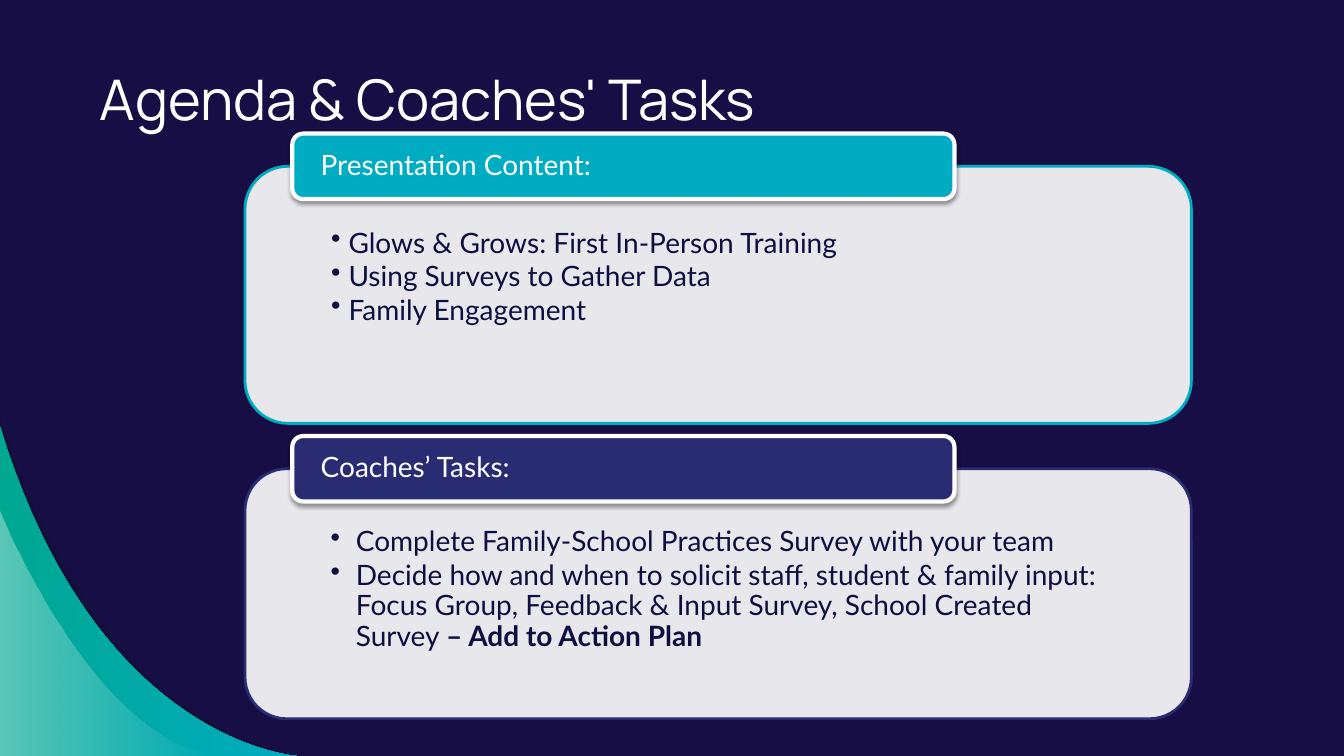
from pptx import Presentation
from pptx.dml.color import RGBColor
from pptx.enum.shapes import MSO_SHAPE
from pptx.enum.text import MSO_ANCHOR, MSO_AUTO_SIZE, PP_ALIGN
from pptx.oxml.ns import qn
from pptx.util import Pt
from lxml.etree import SubElement

HUES = {
    "night": "160E44",
    "shade": "12102F",
    "green": "00A791",
    "teal": "00ACC2",
    "navy": "292C73",
    "ink": "0D0F41",
    "white": "FFFFFF",
}


def hue(name):
    """Return the named colour."""
    return RGBColor.from_string(HUES[name])


def fade(shape, *levels):
    """Set the opacity, in percent, of each fill colour in turn."""
    marks = shape.element.xpath("p:spPr/a:solidFill/a:srgbClr | p:spPr/a:gradFill//a:srgbClr")
    for mark, level in zip(marks, levels):
        SubElement(mark, qn("a:alpha"), val=str(level * 1000))


def style(para, font, size, color):
    """Set the font of a whole paragraph."""
    para.font.name = font
    para.font.size = Pt(size)
    para.font.color.rgb = hue(color)


def wave(slide, curve, *names):
    """Draw a corner wave under a cubic curve, filled plain or left to right."""
    steps = 40
    dots = []
    for step in range(steps + 1):
        t = step / steps
        parts = ((1 - t) ** 3, 3 * t * (1 - t) ** 2, 3 * t * t * (1 - t), t ** 3)
        dots.append(tuple(Pt(sum(k * v for k, v in zip(parts, axis))) for axis in zip(*curve)))
    pen = slide.shapes.build_freeform(*dots[0])
    pen.add_line_segments(dots[1:] + [(0, Pt(540))], close=True)
    shape = pen.convert_to_shape()
    shape.shadow.inherit = False
    shape.line.fill.background()
    if len(names) == 1:
        shape.fill.solid()
        shape.fill.fore_color.rgb = hue(names[0])
    else:
        shape.fill.gradient()
        shape.fill.gradient_angle = 0
        for stop, name in zip(shape.fill.gradient_stops, names):
            stop.color.rgb = hue(name)
    return shape


def panel(slide, box, fill, edge, width, pads, anchor):
    """Add a rounded box ready for left-aligned text."""
    shape = slide.shapes.add_shape(MSO_SHAPE.ROUNDED_RECTANGLE, *map(Pt, box))
    shape.shadow.inherit = False
    shape.fill.solid()
    shape.fill.fore_color.rgb = hue(fill)
    shape.line.color.rgb = hue(edge)
    shape.line.width = Pt(width)
    frame = shape.text_frame
    frame.word_wrap = True
    frame.vertical_anchor = anchor
    frame.margin_left, frame.margin_top, frame.margin_right, frame.margin_bottom = map(Pt, pads)
    return shape


def bullet(para, runs, indent, pitch, after):
    """Fill a bulleted paragraph from (text, bold) pairs."""
    props = para._p.get_or_add_pPr()
    props.set("marL", str(Pt(indent)))
    props.set("indent", str(-Pt(indent)))
    SubElement(props, qn("a:buChar"), char="•")
    para.alignment = PP_ALIGN.LEFT
    para.line_spacing = pitch
    para.space_after = Pt(after)
    style(para, "Lato", 20, "ink")
    for text, bold in runs:
        run = para.add_run()
        run.text = text
        if bold:
            run.font.bold = True


def card(slide, top, height, color, items, indent, pitch, after):
    """Add a pale card with its bullets."""
    shape = panel(slide, (175, top, 676, height), "white", color, 2,
                  (52.5, 33, 52.5, 11.5), MSO_ANCHOR.TOP)
    fade(shape, 90)
    frame = shape.text_frame
    for spot, runs in enumerate(items):
        para = frame.add_paragraph() if spot else frame.paragraphs[0]
        bullet(para, runs, indent, pitch, after)


def label(slide, top, color, text):
    """Add the shadowed heading that overlaps the top of a card."""
    shape = panel(slide, (208.8, top - 23.4, 473, 46.8), color, "white", 3,
                  (18, 0, 18, 0), MSO_ANCHOR.MIDDLE)
    para = shape.text_frame.paragraphs[0]
    para.text = text
    para.alignment = PP_ALIGN.LEFT
    para.line_spacing = 0.9
    style(para, "Lato", 20, "white")
    effect = shape.element.spPr.find(qn("a:effectLst"))
    glow = SubElement(effect, qn("a:outerShdw"), blurRad=str(Pt(3.1)), dist=str(Pt(1.6)),
                      dir="5400000", rotWithShape="0")
    black = SubElement(glow, qn("a:srgbClr"), val="000000")
    SubElement(black, qn("a:alpha"), val="38000")


def title(slide, text):
    """Place and format the slide title."""
    shape = slide.shapes.title
    shape.left, shape.top, shape.width, shape.height = map(Pt, (64, 36.7, 739, 66.2))
    frame = shape.text_frame
    frame.auto_size = MSO_AUTO_SIZE.NONE
    frame.word_wrap = True
    frame.vertical_anchor = MSO_ANCHOR.MIDDLE
    frame.margin_left = frame.margin_right = frame.margin_top = frame.margin_bottom = Pt(7.2)
    para = frame.paragraphs[0]
    para.text = text
    para.alignment = PP_ALIGN.LEFT
    style(para, "Manrope", 40, "white")


def main():
    """Build and save the agenda slide."""
    deck = Presentation()
    deck.slide_width, deck.slide_height = Pt(960), Pt(540)
    slide = deck.slides.add_slide(deck.slide_layouts[5])
    slide.background.fill.solid()
    slide.background.fill.fore_color.rgb = hue("night")

    fade(wave(slide, [(0, 297.4), (70.6, 532), (218, 540), (218, 540)], "shade"), 54)
    wave(slide, [(0, 303.8), (68.4, 532), (212.4, 540), (212.4, 540)], "green", "teal")
    fade(wave(slide, [(0, 364.3), (0, 364.3), (65.5, 529), (155.5, 540)], "white", "white"), 36, 0)

    title(slide, "Agenda & Coaches' Tasks")

    topics = [
        [("Glows & Grows: First In-Person Training", False)],
        [("Using Surveys to Gather Data", False)],
        [("Family Engagement", False)],
    ]
    tasks = [
        [("Complete Family-School Practices Survey with your team", False)],
        [("Decide how and when to solicit staff, student & family input: "
          "Focus Group, Feedback & Input Survey, School Created Survey ", False),
         ("– Add to Action Plan", True)],
    ]
    card(slide, 118.8, 183.6, "teal", topics, 12.5, 1.0, 0)
    label(slide, 118.8, "teal", "Presentation Content:")
    card(slide, 334.8, 178.6, "navy", tasks, 18, 0.9, 3)
    label(slide, 334.8, "navy", "Coaches’ Tasks:")
    deck.save("out.pptx")


if __name__ == "__main__":
    main()
